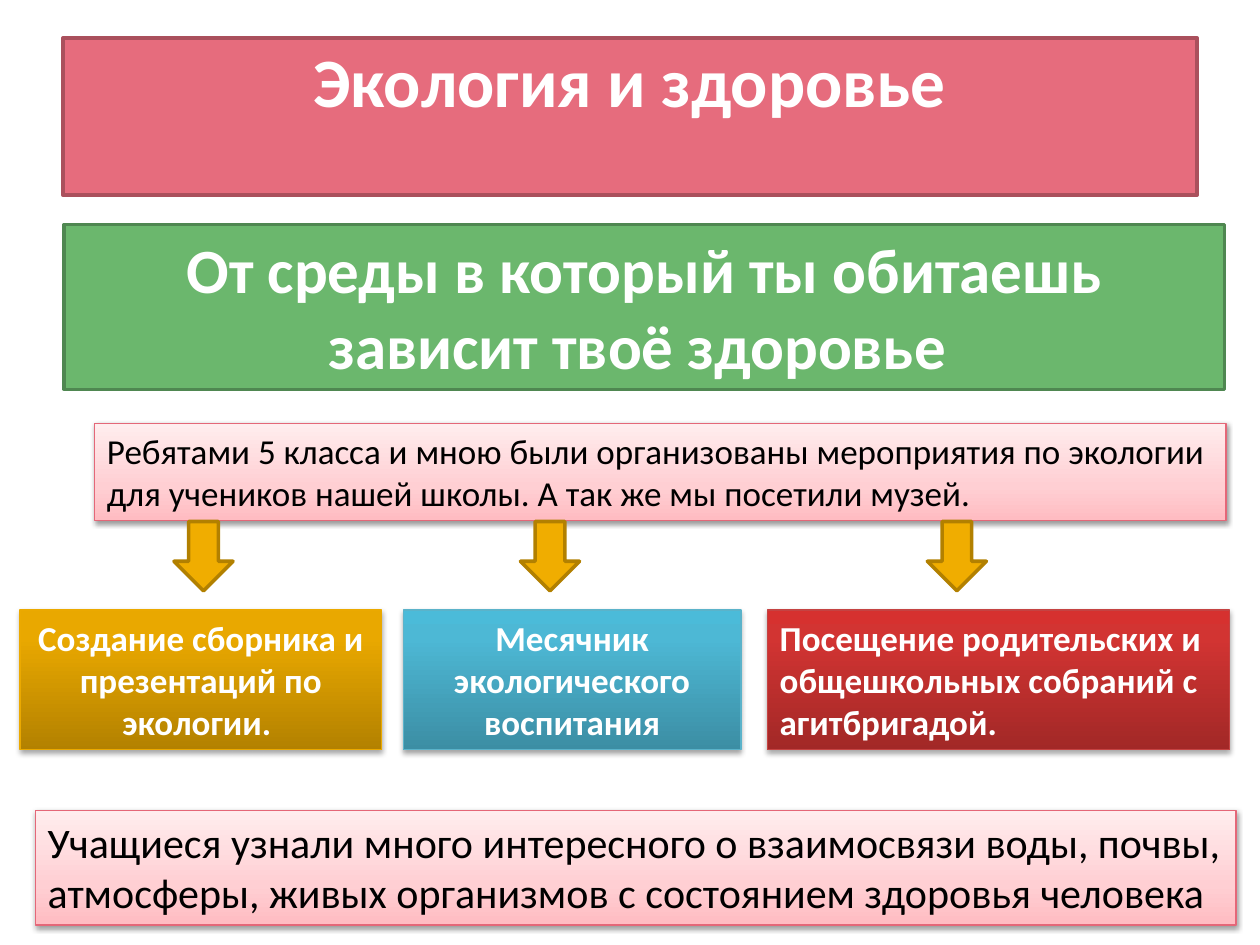
from dataclasses import dataclass
from typing import Optional

from lxml import etree
from pptx import Presentation
from pptx.dml.color import RGBColor
from pptx.enum.shapes import MSO_SHAPE
from pptx.enum.text import MSO_ANCHOR, MSO_AUTO_SIZE, PP_ALIGN
from pptx.oxml.ns import qn
from pptx.util import Pt

RECTANGLE = MSO_SHAPE.RECTANGLE
DOWN_ARROW = MSO_SHAPE.DOWN_ARROW
TOP = MSO_ANCHOR.TOP
GROW = MSO_AUTO_SIZE.SHAPE_TO_FIT_TEXT
FIXED = MSO_AUTO_SIZE.NONE
LEFT = PP_ALIGN.LEFT
CENTER = PP_ALIGN.CENTER


@dataclass(frozen=True)
class Shadow:
    opacity: int
    distance: float
    blur: float = 3.1


@dataclass(frozen=True)
class Style:
    """Look of a shape; stops are (percent, colour) pairs from bottom to top."""
    stops: tuple[tuple[int, str], ...]
    line: str
    line_width: float = 2
    shadow: Optional[Shadow] = None


def glossy(bottom: str, middle: str, top: str, line: str) -> Style:
    return Style(((0, bottom), (80, middle), (100, top)), line, 0.75, Shadow(35, 1.8))


@dataclass(frozen=True)
class Theme:
    font: str = "Calibri"
    light_text: str = "FFFFFF"
    dark_text: str = "000000"
    title_size: float = 39.6
    banner_size: float = 36
    conclusion_size: float = 24
    body_size: float = 20
    title: Style = Style(((0, "E66C7D"),), "AA505C")
    banner: Style = Style(((0, "6BB76D"),), "4F8751")
    arrow: Style = Style(((0, "F0AD00"),), "B28000")
    note: Style = Style(((0, "FFBCC2"), (35, "FFCFD3"), (100, "FFEDEE")),
                        "E46778", 0.75, Shadow(38, 1.6))
    gold: Style = glossy("B38100", "E9A800", "EAA800", "EBA900")
    blue: Style = glossy("3C8EA4", "4DB8D5", "4BBBD9", "5BB3CA")
    red: Style = glossy("A22827", "D23432", "D6312F", "C54342")


THEME = Theme()


@dataclass(frozen=True)
class Box:
    left: float
    top: float
    width: float
    height: float


@dataclass(frozen=True)
class Panel:
    box: Box
    style: Style
    text: str
    size: float
    bold: bool = True
    color: str = THEME.light_text
    align: PP_ALIGN = CENTER
    grows: bool = True


ACTIVITY_TOP, ACTIVITY_HEIGHT = 348.5, 79.9
ARROW_TOP, ARROW_WIDTH, ARROW_HEIGHT = 298, 33.8, 39.6
ARROW_LEFTS = (99.4, 297.4, 529.9)


def activity(left: float, width: float, style: Style, text: str,
             align: PP_ALIGN = CENTER) -> Panel:
    box = Box(left, ACTIVITY_TOP, width, ACTIVITY_HEIGHT)
    return Panel(box, style, text, THEME.body_size, align=align)


def note(box: Box, text: str, size: float) -> Panel:
    return Panel(box, THEME.note, text, size, False, THEME.dark_text, LEFT)


PANELS = (
    Panel(Box(36, 21.6, 648, 90), THEME.title, "Экология и здоровье",
          THEME.title_size, grows=False),
    Panel(Box(36.7, 128.2, 663.1, 94.3), THEME.banner,
          "От среды в который ты обитаешь зависит твоё здоровье ", THEME.banner_size),
    note(Box(54, 241.9, 646.6, 55.4),
         "Ребятами 5 класса и мною были организованы мероприятия по экологии "
         "для учеников нашей школы. А так же мы посетили музей.", THEME.body_size),
    activity(11.5, 206.6, THEME.gold, "Создание сборника и презентаций по экологии. "),
    activity(230.4, 193, THEME.blue, "Месячник экологического воспитания"),
    activity(438.5, 264.2, THEME.red,
             "Посещение родительских и общешкольных собраний с агитбригадой.", LEFT),
    note(Box(20.2, 463, 686.2, 65.5),
         "Учащиеся узнали много интересного о взаимосвязи воды, почвы, атмосферы, "
         "живых организмов с состоянием здоровья человека", THEME.conclusion_size),
)


def apply_fill(shape, stops: tuple[tuple[int, str], ...]) -> None:
    if len(stops) == 1:
        shape.fill.solid()
        shape.fill.fore_color.rgb = RGBColor.from_string(stops[0][1])
        return
    shape.fill.gradient()
    shape.fill.gradient_angle = 90
    stop_list = shape._element.spPr.find(qn("a:gradFill")).find(qn("a:gsLst"))
    for old_stop in list(stop_list):
        stop_list.remove(old_stop)
    for percent, color in stops:
        stop = etree.SubElement(stop_list, qn("a:gs"), pos=str(percent * 1000))
        etree.SubElement(stop, qn("a:srgbClr"), val=color)


def apply_shadow(shape, shadow: Optional[Shadow]) -> None:
    shape.shadow.inherit = False
    if shadow is None:
        return
    effects = shape._element.spPr.find(qn("a:effectLst"))
    outer = etree.SubElement(effects, qn("a:outerShdw"), blurRad=str(Pt(shadow.blur)),
                             dist=str(Pt(shadow.distance)), dir="5400000", rotWithShape="0")
    color = etree.SubElement(outer, qn("a:srgbClr"), val=THEME.dark_text)
    etree.SubElement(color, qn("a:alpha"), val=str(shadow.opacity * 1000))


def draw_shape(slide, kind: MSO_SHAPE, box: Box, style: Style):
    shape = slide.shapes.add_shape(kind, Pt(box.left), Pt(box.top),
                                   Pt(box.width), Pt(box.height))
    apply_fill(shape, style.stops)
    shape.line.color.rgb = RGBColor.from_string(style.line)
    shape.line.width = Pt(style.line_width)
    apply_shadow(shape, style.shadow)
    return shape


def draw_panel(slide, panel: Panel) -> None:
    text_frame = draw_shape(slide, RECTANGLE, panel.box, panel.style).text_frame
    text_frame.text = panel.text
    text_frame.word_wrap = True
    text_frame.vertical_anchor = TOP
    text_frame.auto_size = GROW if panel.grows else FIXED
    if not panel.grows:
        text_frame.margin_top = 0
    paragraph = text_frame.paragraphs[0]
    paragraph.alignment = panel.align
    for run in paragraph.runs:
        run.font.name = THEME.font
        run.font.size = Pt(panel.size)
        run.font.bold = panel.bold
        run.font.color.rgb = RGBColor.from_string(panel.color)


def main() -> None:
    presentation = Presentation()
    presentation.slide_width, presentation.slide_height = Pt(720), Pt(540)
    slide = presentation.slides.add_slide(presentation.slide_layouts[6])
    for panel in PANELS:
        draw_panel(slide, panel)
    for left in ARROW_LEFTS:
        draw_shape(slide, DOWN_ARROW, Box(left, ARROW_TOP, ARROW_WIDTH, ARROW_HEIGHT),
                   THEME.arrow)
    presentation.save("out.pptx")


if __name__ == "__main__":
    main()
